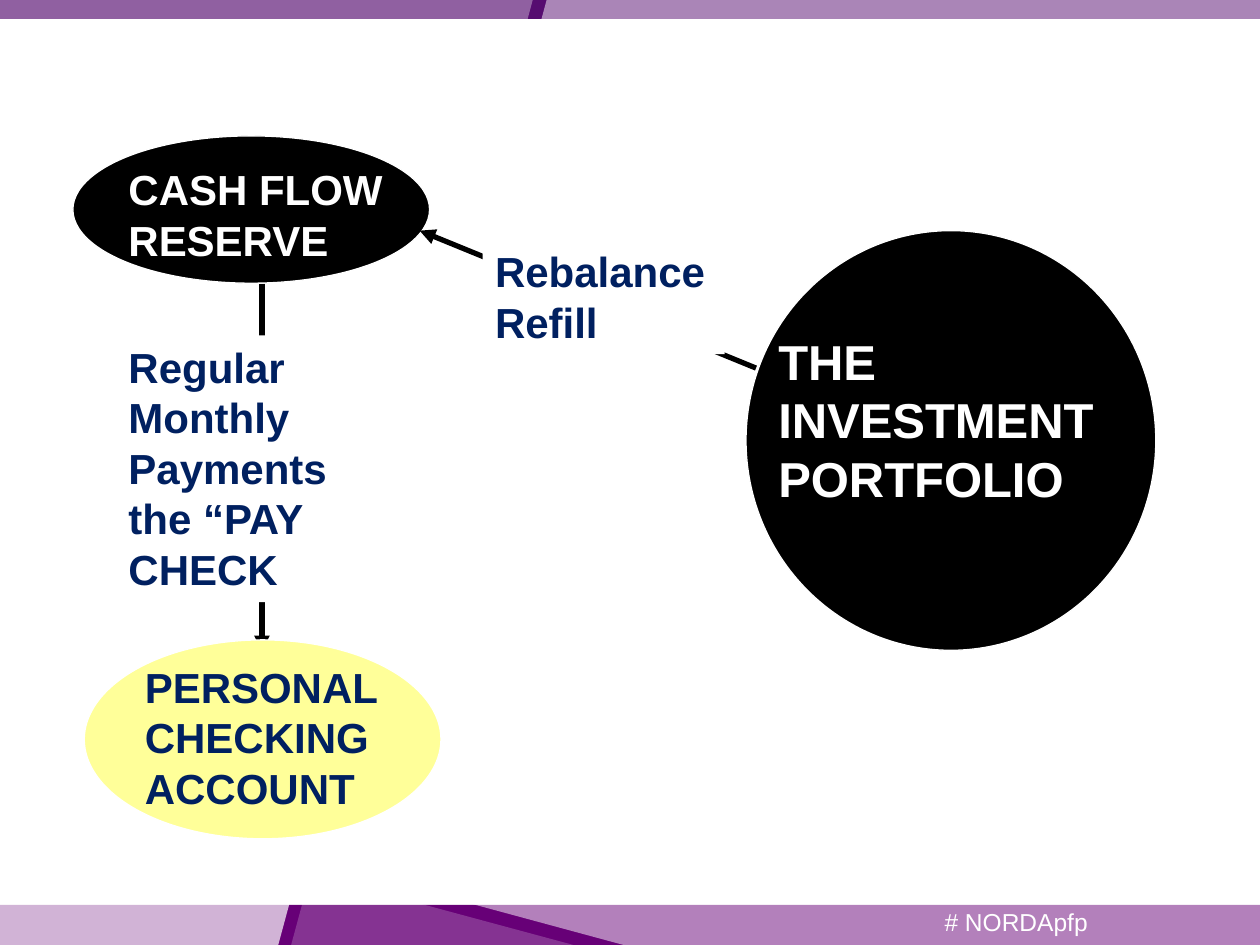
from dataclasses import dataclass

from lxml import etree
from pptx import Presentation
from pptx import util as u
from pptx.dml.color import RGBColor
from pptx.enum import shapes, text
from pptx.oxml import ns


@dataclass(frozen=True)
class Theme:
    font: str = "Arial"
    white: str = "FFFFFF"
    black: str = "000000"
    navy: str = "002060"
    yellow: str = "FFFF99"
    top_purple: str = "560C70"
    bottom_purple: str = "670077"
    footer_size: int = 14
    label_size: int = 24
    large_size: int = 28


THEME = Theme()


def add_filled(page, preset, place, color, outline=None):
    shape = page.shapes.add_shape(preset, *map(u.Cm, place))
    shape.shadow.inherit = False
    shape.fill.solid()
    shape.fill.fore_color.rgb = RGBColor.from_string(color)
    if outline:
        shape.line.color.rgb = RGBColor.from_string(outline)
        shape.line.width = u.Pt(0.75)
    else:
        shape.line.fill.background()
    return shape


def write(box, words, size, color, bold=True, align=text.PP_ALIGN.LEFT):
    frame = box.text_frame
    frame.word_wrap = True
    frame.vertical_anchor = text.MSO_ANCHOR.TOP
    frame.text = words
    for para in frame.paragraphs:
        para.alignment = align
        for span in para.runs:
            span.font.name = THEME.font
            span.font.size = u.Pt(size)
            span.font.bold = bold
            span.font.color.rgb = RGBColor.from_string(color)


deck = Presentation()
deck.slide_width, deck.slide_height = u.Cm(25.4), u.Cm(19.05)
page = deck.slides.add_slide(deck.slide_layouts[6])
rectangle, oval = shapes.MSO_SHAPE.RECTANGLE, shapes.MSO_SHAPE.OVAL

# Purple bands and footer
add_filled(page, rectangle, (0, 0, 25.4, 0.38), THEME.top_purple)
add_filled(page, rectangle, (0, 18.24, 25.4, 0.81), THEME.bottom_purple)
footer = page.shapes.add_textbox(*map(u.Cm, (16.26, 18.08, 5.92, 1.02)))
write(footer, "# NORDApfp", THEME.footer_size, THEME.white, False, text.PP_ALIGN.RIGHT)
footer.text_frame.vertical_anchor = text.MSO_ANCHOR.MIDDLE

# Translucent white panels that tint the bands: opacity in percent, corners
panels = [
    (70, [(0, 1.35), (9.47, 3.91), (9.63, 4.19), (5.61, 19.05), (0, 19.05)]),
    (35, [(0, 0), (10.74, 0), (9.8, 3.51), (9.53, 3.66), (0, 1.09)]),
    (20, [(6.38, 17.68), (6.48, 17.68), (11.56, 19.05), (5.87, 19.05), (6.2, 17.83)]),
    (50, [(11.02, 0), (25.4, 0), (25.4, 19.05), (12.57, 19.05), (6.55, 17.42), (6.4, 17.15)]),
]
for opacity, corners in panels:
    points = [(u.Cm(x), u.Cm(y)) for x, y in corners]
    builder = page.shapes.build_freeform(*points[0])
    builder.add_line_segments(points[1:], close=True)
    panel = builder.convert_to_shape()
    panel.shadow.inherit = False
    panel.fill.solid()
    panel.fill.fore_color.rgb = RGBColor.from_string(THEME.white)
    panel.line.fill.background()
    tint = panel.fill._xPr.find(".//" + ns.qn("a:srgbClr"))
    etree.SubElement(tint, ns.qn("a:alpha"), val=str(opacity * 1000))

# Ovals
for place, color in [
    ((1.47, 2.74, 7.19, 2.97), THEME.black),
    ((15.04, 4.65, 8.26, 8.46), THEME.black),
]:
    add_filled(page, oval, place, color, THEME.white)

# Arrows: to the checking account, and from the portfolio to the reserve
for ends in [(5.28, 5.72, 5.28, 13.13), (15.24, 7.42, 8.46, 4.65)]:
    arrow = page.shapes.add_connector(shapes.MSO_CONNECTOR.STRAIGHT, *map(u.Cm, ends))
    arrow.line.color.rgb = RGBColor.from_string(THEME.black)
    arrow.line.width = u.Pt(3)
    etree.SubElement(arrow.line._get_or_add_ln(), ns.qn("a:tailEnd"), type="triangle")
    etree.SubElement(arrow._element.spPr, ns.qn("a:effectLst"))

# The checking account covers the tip of its arrow
add_filled(page, oval, (1.7, 12.9, 7.19, 4.01), THEME.yellow, THEME.white)

# Oval labels
for place, words, size, color in [
    ((2.34, 3.18, 6.55, 2.29), "CASH FLOW RESERVE", THEME.label_size, THEME.white),
    ((15.44, 6.55, 7.42, 3.81), "THE INVESTMENT PORTFOLIO", THEME.large_size, THEME.white),
    ((2.67, 13.21, 6.55, 3.33), "PERSONAL CHECKING ACCOUNT", THEME.label_size, THEME.navy),
]:
    write(page.shapes.add_textbox(*map(u.Cm, place)), words, size, color)

# Arrow labels on white
for place, words in [
    ((9.73, 4.83, 4.88, 2.31), "Rebalance\nRefill"),
    ((2.34, 6.76, 6.78, 5.38), "Regular Monthly Payments\nthe “PAY CHECK"),
]:
    label = add_filled(page, rectangle, place, THEME.white)
    write(label, words, THEME.label_size, THEME.navy)

deck.save("out.pptx")
